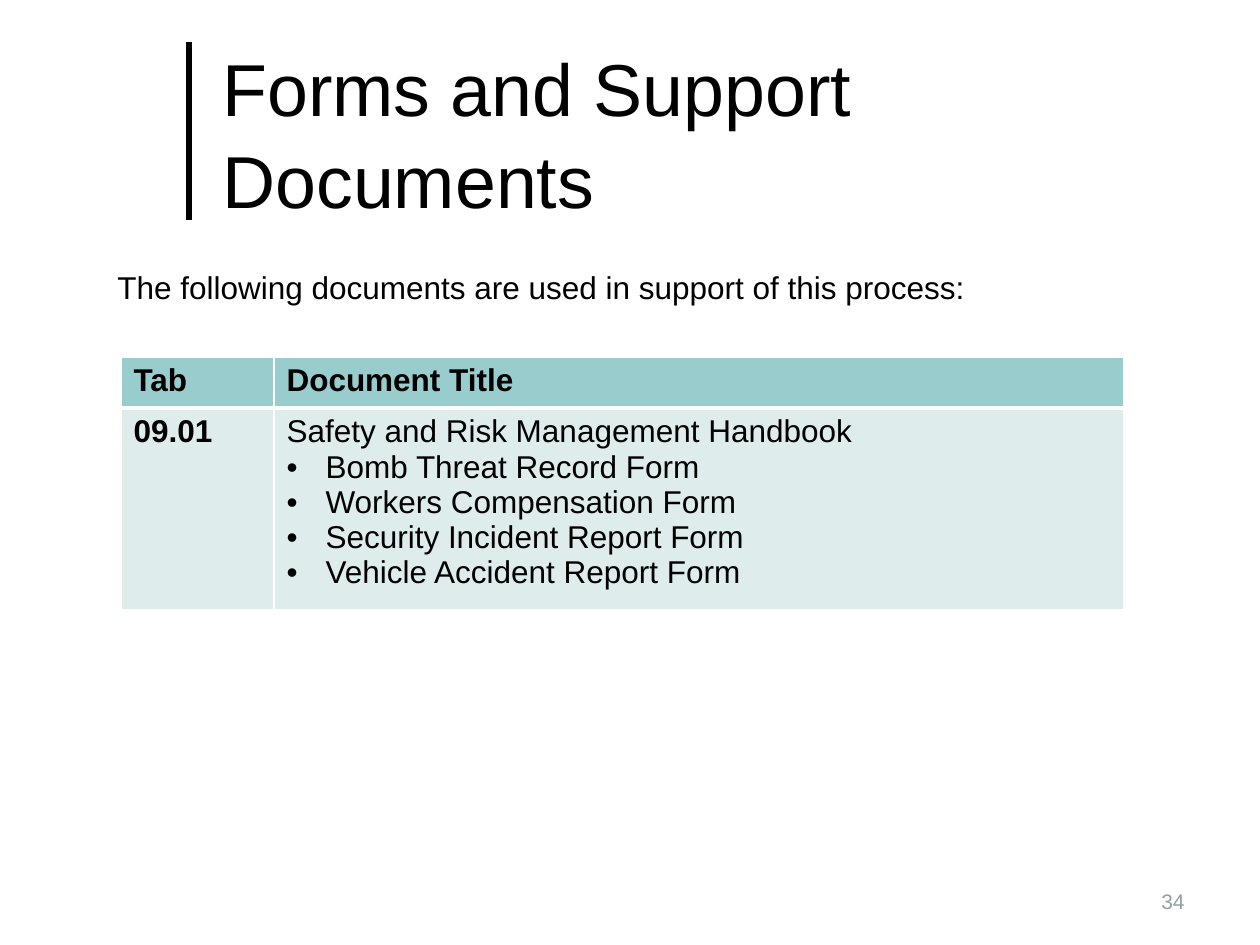
from lxml import etree
from pptx import Presentation
from pptx import util as u
from pptx.dml.color import RGBColor
from pptx.enum import shapes, text
from pptx.oxml import ns

PX = 914400 / 126
BLACK = RGBColor(0, 0, 0)
WHITE = RGBColor(255, 255, 255)
GREY = RGBColor(0x90, 0xA0, 0xA0)
TEAL = RGBColor(0x99, 0xCC, 0xCC)
PALE_TEAL = RGBColor(0xDE, 0xEC, 0xEC)

FORMS = [
    "Bomb Threat Record Form",
    "Workers Compensation Form",
    "Security Incident Report Form",
    "Vehicle Accident Report Form",
]


def px(length):
    return u.Emu(round(length * PX))


def add_element(parent, tag, **attributes):
    return etree.SubElement(parent, ns.qn(tag), **attributes)


def write(paragraph, words, size=18, color=BLACK, bold=False, align=None,
          spacing=None, bullet=False):
    if bullet:
        properties = paragraph._p.get_or_add_pPr()
        indent = px(39)
        properties.set("marL", str(indent))
        properties.set("indent", str(-indent))
        add_element(properties, "a:buFont", typeface="Arial")
        add_element(properties, "a:buChar", char="•")
    paragraph.alignment = align
    paragraph.line_spacing = spacing
    run = paragraph.add_run()
    run.text = words
    run.font.name = "Arial"
    run.font.size = u.Pt(size)
    run.font.bold = bold
    run.font.color.rgb = color


def add_text(slide, box, words, anchor=text.MSO_ANCHOR.TOP, **style):
    frame = slide.shapes.add_textbox(*map(px, box)).text_frame
    frame.word_wrap = True
    frame.vertical_anchor = anchor
    write(frame.paragraphs[0], words, **style)


def add_title_rule(slide):
    line = slide.shapes.add_connector(
        shapes.MSO_CONNECTOR.STRAIGHT, px(189), px(220), px(189), px(42))
    line.line.color.rgb = BLACK
    line.line.width = u.Pt(3)
    add_element(line._element.spPr, "a:effectLst")


def set_borders(cell, **widths):
    properties = cell._tc.get_or_add_tcPr()
    for position, (side, width) in enumerate(widths.items()):
        border = etree.Element(ns.qn(f"a:ln{side}"), w=str(u.Pt(width)))
        fill = add_element(border, "a:solidFill")
        add_element(fill, "a:srgbClr", val=str(WHITE))
        properties.insert(position, border)


def fill_cell(cell, lines, color, bold, top, bottom):
    cell.fill.solid()
    cell.fill.fore_color.rgb = color
    set_borders(cell, L=1, R=1, T=top, B=bottom)
    frame = cell.text_frame
    for number, words in enumerate(lines):
        paragraph = frame.add_paragraph() if number else frame.paragraphs[0]
        write(paragraph, words, bold=bold, bullet=number > 0)


def add_document_table(slide):
    table = slide.shapes.add_table(
        2, 2, px(121), px(357), px(1003), px(239)).table
    for column, width in zip(table.columns, (153, 850)):
        column.width = px(width)
    for row, height in zip(table.rows, (51, 188)):
        row.height = px(height)
    headings = [["Tab"], ["Document Title"]]
    documents = [["09.01"], ["Safety and Risk Management Handbook", *FORMS]]
    for column in range(2):
        fill_cell(table.cell(0, column), headings[column], TEAL, True, 1, 3)
        fill_cell(table.cell(1, column), documents[column], PALE_TEAL,
                  column == 0, 3, 1)


def main():
    presentation = Presentation()
    presentation.slide_width = px(1260)
    presentation.slide_height = px(945)
    slide = presentation.slides.add_slide(presentation.slide_layouts[6])
    add_title_rule(slide)
    add_text(slide, (210, 26, 966, 210), "Forms and Support Documents",
             anchor=text.MSO_ANCHOR.MIDDLE, size=42, spacing=1.04)
    add_document_table(slide)
    add_text(slide, (105, 262, 914, 50),
             "The following documents are used in support of this process:")
    add_text(slide, (903, 876, 294, 50), "34", size=12, color=GREY,
             anchor=text.MSO_ANCHOR.MIDDLE, align=text.PP_ALIGN.RIGHT)
    presentation.save("out.pptx")


if __name__ == "__main__":
    main()
